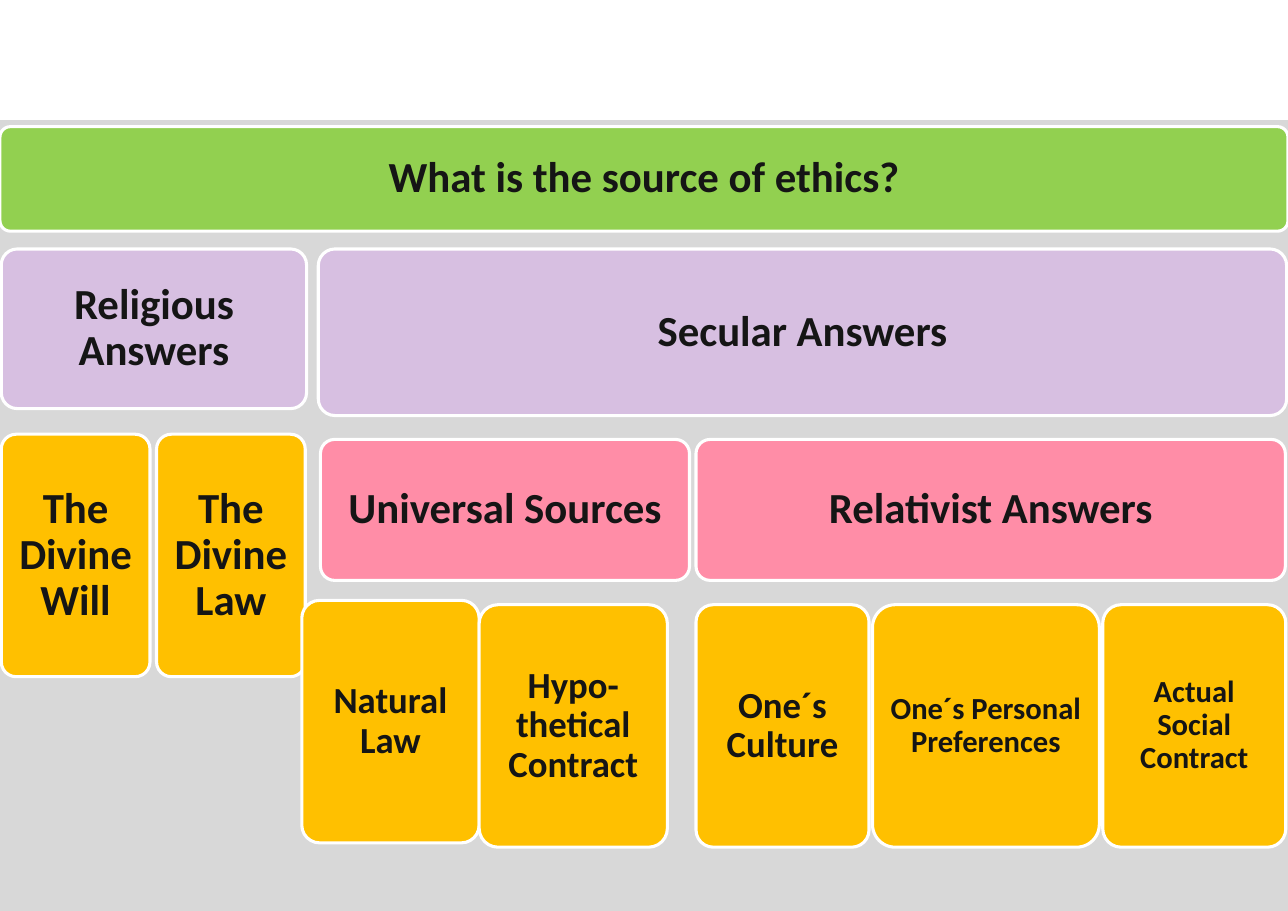
from collections import namedtuple
from dataclasses import dataclass

from pptx import Presentation
from pptx.dml.color import RGBColor as RGB
from pptx.enum.shapes import MSO_SHAPE as SHAPE
from pptx.enum.text import MSO_ANCHOR as ANCHOR, PP_ALIGN as ALIGN
from pptx.util import Cm, Pt


@dataclass(frozen=True)
class Theme:
    font: str = "Calibri"
    text: str = "151515"
    outline: str = "FFFFFF"
    backdrop: str = "D8D8D8"
    question: str = "92D050"
    answer: str = "D7BFE1"
    source: str = "FF8DA7"
    leaf: str = "FFC000"
    large: int = 28
    medium: int = 24
    small: int = 20


THEME = Theme()
INSETS = {THEME.large: 0.3, THEME.medium: 0.25, THEME.small: 0.2}
LEAF_H = 5.59

# Lengths in centimetres; a leaf's dx and dy are measured from its branch box
Box = namedtuple("Box", "x y w h")
Leaf = namedtuple("Leaf", "text dx dy w size")


def add_shape(slide, kind, box, fill):
    sp = slide.shapes.add_shape(kind, *(Cm(v) for v in box))
    sp.shadow.inherit = False
    sp.fill.solid()
    sp.fill.fore_color.rgb = RGB.from_string(fill)
    return sp


def draw_backdrop(slide, box):
    sp = add_shape(slide, SHAPE.RECTANGLE, box, THEME.backdrop)
    sp.line.fill.background()


def draw_card(slide, box, text, fill, size=THEME.large):
    sp = add_shape(slide, SHAPE.ROUNDED_RECTANGLE, box, fill)
    sp.adjustments[0] = 0.1
    sp.line.color.rgb = RGB.from_string(THEME.outline)
    sp.line.width = Pt(2)

    tf = sp.text_frame
    tf.word_wrap = True
    tf.vertical_anchor = ANCHOR.MIDDLE
    inset = Cm(INSETS[size])
    tf.margin_left = tf.margin_right = inset
    tf.margin_top = tf.margin_bottom = inset

    p = tf.paragraphs[0]
    p.alignment = ALIGN.CENTER
    p.line_spacing = 0.9
    r = p.add_run()
    r.text = text
    r.font.name = THEME.font
    r.font.size = Pt(size)
    r.font.bold = True
    r.font.color.rgb = RGB.from_string(THEME.text)


def draw_branch(slide, box, title, fill, leaves):
    """Draw a heading card in the box and its leaves below it."""
    draw_card(slide, box, title, fill)
    for leaf in leaves:
        leaf_box = Box(box.x + leaf.dx, box.y + leaf.dy, leaf.w, LEAF_H)
        draw_card(slide, leaf_box, leaf.text, THEME.leaf, leaf.size)


def draw_tree(slide, box):
    x, y = box.x, box.y

    # Question
    draw_card(slide, Box(x, y + 0.15, box.w, 2.41),
              "What is the source of ethics?", THEME.question)

    # Religious answers
    draw_branch(slide, Box(x + 0.03, y + 2.97, 7.04, 3.68),
                "Religious Answers", THEME.answer, [
                    Leaf("The Divine Will", 0, 4.27, 3.43, THEME.large),
                    Leaf("The Divine Law", 3.58, 4.27, 3.43, THEME.large),
                ])

    # Secular answers
    draw_card(slide, Box(x + 7.34, y + 2.97, 22.33, 3.84),
              "Secular Answers", THEME.answer)
    draw_branch(slide, Box(x + 7.39, y + 7.36, 8.51, 3.25),
                "Universal Sources", THEME.source, [
                    Leaf("Natural Law", -0.43, 3.71, 4.09, THEME.medium),
                    Leaf("Hypo-thetical Contract", 3.66, 3.81, 4.34, THEME.medium),
                ])
    draw_branch(slide, Box(x + 16.05, y + 7.36, 13.59, 3.25),
                "Relativist Answers", THEME.source, [
                    Leaf("One´s Culture", 0, 3.81, 3.99, THEME.medium),
                    Leaf("One´s Personal Preferences", 4.07, 3.81, 5.23, THEME.small),
                    Leaf("Actual Social Contract", 9.38, 3.81, 4.22, THEME.small),
                ])


def main():
    prs = Presentation()
    prs.slide_width, prs.slide_height = Cm(29.7), Cm(21)
    slide = prs.slides.add_slide(prs.slide_layouts[6])
    body = Box(0, 2.77, 29.7, 18.23)
    draw_backdrop(slide, body)
    draw_tree(slide, body)
    prs.save("out.pptx")


if __name__ == "__main__":
    main()
